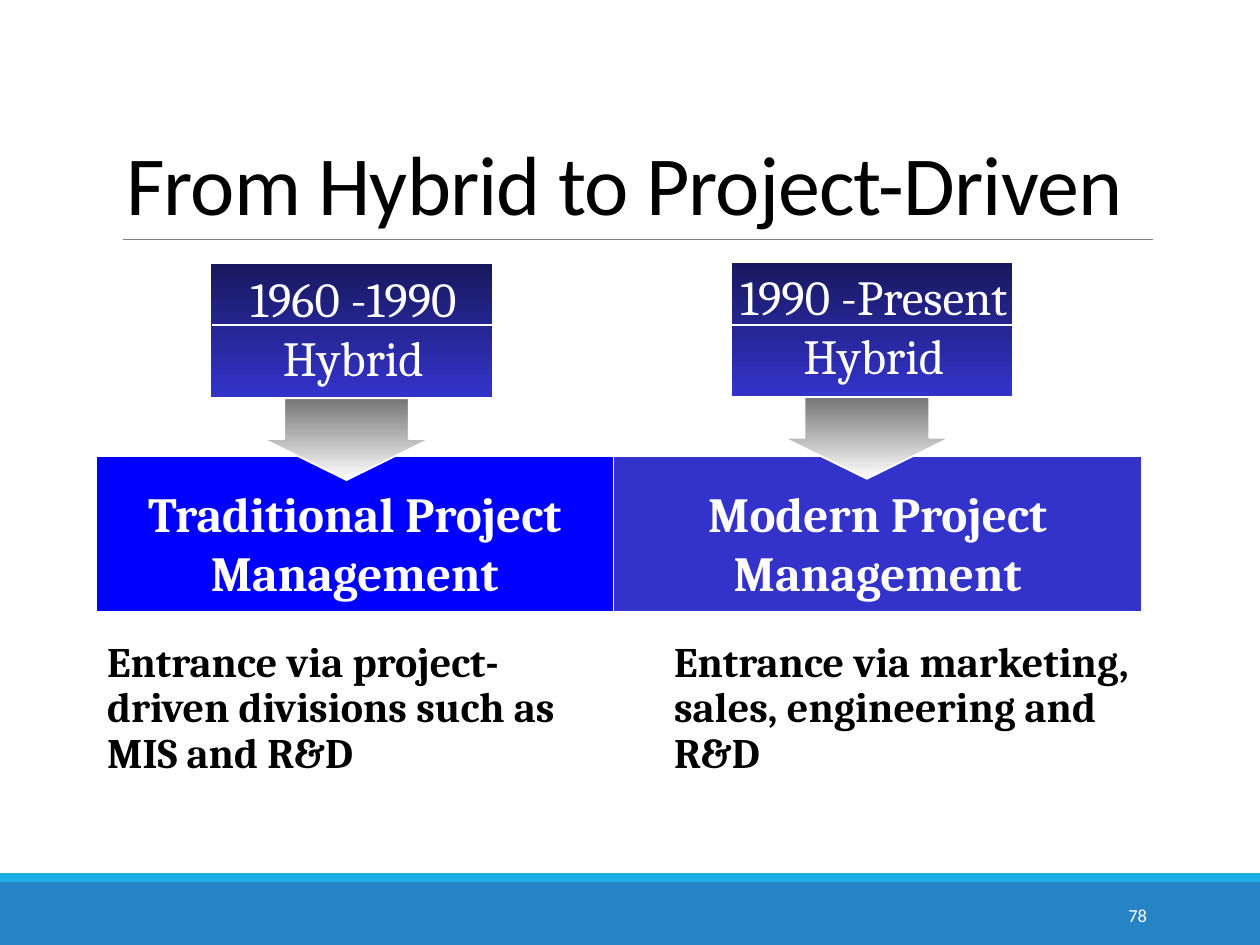
from lxml import etree
from pptx import Presentation
from pptx.dml.color import RGBColor
from pptx.enum.shapes import MSO_CONNECTOR as Connector, MSO_SHAPE as Shape
from pptx.enum.text import MSO_ANCHOR as Anchor, PP_ALIGN as Align
from pptx.oxml import parse_xml
from pptx.oxml.ns import nsdecls, qn
from pptx.util import Inches, Pt

WHITE = RGBColor(0xFF, 0xFF, 0xFF)
BLACK = RGBColor(0, 0, 0)
GRAY = RGBColor(0x80, 0x80, 0x80)
ARROW_GRAY = RGBColor(0x75, 0x75, 0x75)
NAVY = RGBColor(0x18, 0x18, 0x5E)
INDIGO = RGBColor(0x33, 0x33, 0xCC)
BLUE = RGBColor(0, 0, 0xFF)
FOOTER_BLUE = RGBColor(0x26, 0x83, 0xC6)
FOOTER_CYAN = RGBColor(0x1C, 0xAD, 0xE4)

TEXT_SHADOW = (
    f'<a:effectLst {nsdecls("a")}><a:outerShdw blurRad="38100" dist="38100" dir="2700000">'
    '<a:srgbClr val="000000"><a:alpha val="60000"/></a:srgbClr></a:outerShdw></a:effectLst>'
)

deck = Presentation()
deck.slide_width, deck.slide_height = Inches(10), Inches(7.5)
page = deck.slides.add_slide(deck.slide_layouts[5])


def add_block(kind, left, top, width, height, colors, outlined=True):
    """Add a shape with a solid fill, or a top-to-bottom gradient of two colors."""
    block = page.shapes.add_shape(kind, Inches(left), Inches(top), Inches(width), Inches(height))
    block.shadow.inherit = False
    if len(colors) == 1:
        block.fill.solid()
        block.fill.fore_color.rgb = colors[0]
    else:
        block.fill.gradient()
        block.fill.gradient_angle = 270
        for stop, position, color in zip(block.fill.gradient_stops, (0, 1), colors):
            stop.position = position
            stop.color.rgb = color
    if outlined:
        block.line.color.rgb = WHITE
        block.line.width = Pt(1)
    else:
        block.line.fill.background()
    return block


def add_text(left, top, width, height, text, size, color, font="Cambria",
             bold=False, align=Align.CENTER, shadow=False):
    box = page.shapes.add_textbox(Inches(left), Inches(top), Inches(width), Inches(height))
    frame = box.text_frame
    frame.word_wrap = True
    frame.text = text
    for para in frame.paragraphs:
        para.alignment = align
        for span in para.runs:
            span.font.size, span.font.bold = Pt(size), bold
            span.font.color.rgb = color
            if shadow:
                span.font.fill._xPr.find(qn("a:solidFill")).addnext(parse_xml(TEXT_SHADOW))
            span.font.name = font
    return frame


# Footer bands
add_block(Shape.RECTANGLE, 0, 7, 10, 0.5, [FOOTER_BLUE], outlined=False)
add_block(Shape.RECTANGLE, 0, 6.93, 10, 0.07, [FOOTER_CYAN], outlined=False)

# Title
title = page.shapes.title
title.left, title.top, title.width, title.height = map(Inches, (0.9, 0.31, 8.25, 1.59))
title.text_frame.text = "From Hybrid to Project-Driven"
title.text_frame.vertical_anchor = Anchor.BOTTOM
para = title.text_frame.paragraphs[0]
para.alignment, para.line_spacing = Align.LEFT, 0.85
span = para.runs[0]
span.font.size, span.font.name = Pt(48), "Calibri"
span.font.color.rgb = BLACK
span.font._element.set("spc", "-50")

# Two eras: header left and top, band left, width and color, note left and width
eras = [
    (1.67, 2.09, "1960 -1990 Hybrid", 0.76, 4.11, BLUE, "Traditional Project\nManagement",
     0.75, 3.92, "Entrance via project-driven divisions such as MIS and R&D"),
    (5.8, 2.08, "1990 -Present Hybrid", 4.87, 4.19, INDIGO, "Modern Project\nManagement",
     5.25, 4.17, "Entrance via marketing, sales, engineering and R&D"),
]
rules = [(0.98, 9.15, 1.9, GRAY, 0.5)]
for (left, top, period, band_left, band_width, band_color, approach,
     note_left, note_width, note) in eras:
    # Band with the management approach
    add_block(Shape.RECTANGLE, band_left, 3.62, band_width, 1.24, [band_color])
    add_text(band_left, 3.79, band_width, 1.03, approach, 28, WHITE, bold=True, shadow=True)

    # Period header and the arrow below it
    add_block(Shape.RECTANGLE, left, top, 2.24, 1.07, [NAVY, INDIGO])
    arrow = add_block(Shape.DOWN_ARROW, left + 0.42, top + 1.07, 1.32, 0.65, [ARROW_GRAY, WHITE])
    arrow.adjustments[0], arrow.adjustments[1] = 0.75, 0.5
    add_text(left - 0.12, top - 0.01, 2.51, 1.03, period, 28, WHITE, shadow=True)
    rules.append((left + 0.01, left + 2.25, 2.58, WHITE, 1))

    # Note on how it entered
    frame = add_text(note_left, 5.04, note_width, 1.88, note, 24, BLACK, bold=True, align=Align.LEFT)
    frame.margin_left = frame.margin_right = 0
    para = frame.paragraphs[0]
    para.line_spacing, para.space_before, para.space_after = 0.9, Pt(12), Pt(2)
    para._p.get_or_add_pPr().set("marL", str(Inches(0.1)))

# Rules under the title and inside the headers
for start, end, height, color, weight in rules:
    rule = page.shapes.add_connector(
        Connector.STRAIGHT, Inches(start), Inches(height), Inches(end), Inches(height))
    rule.line.color.rgb = color
    rule.line.width = Pt(weight)
    etree.SubElement(rule._element.spPr, qn("a:effectLst"))

# Slide number
frame = add_text(8.12, 7.06, 1.08, 0.4, "78", 10.5, WHITE, font="Calibri", align=Align.RIGHT)
frame.vertical_anchor = Anchor.MIDDLE

deck.save("out.pptx")
